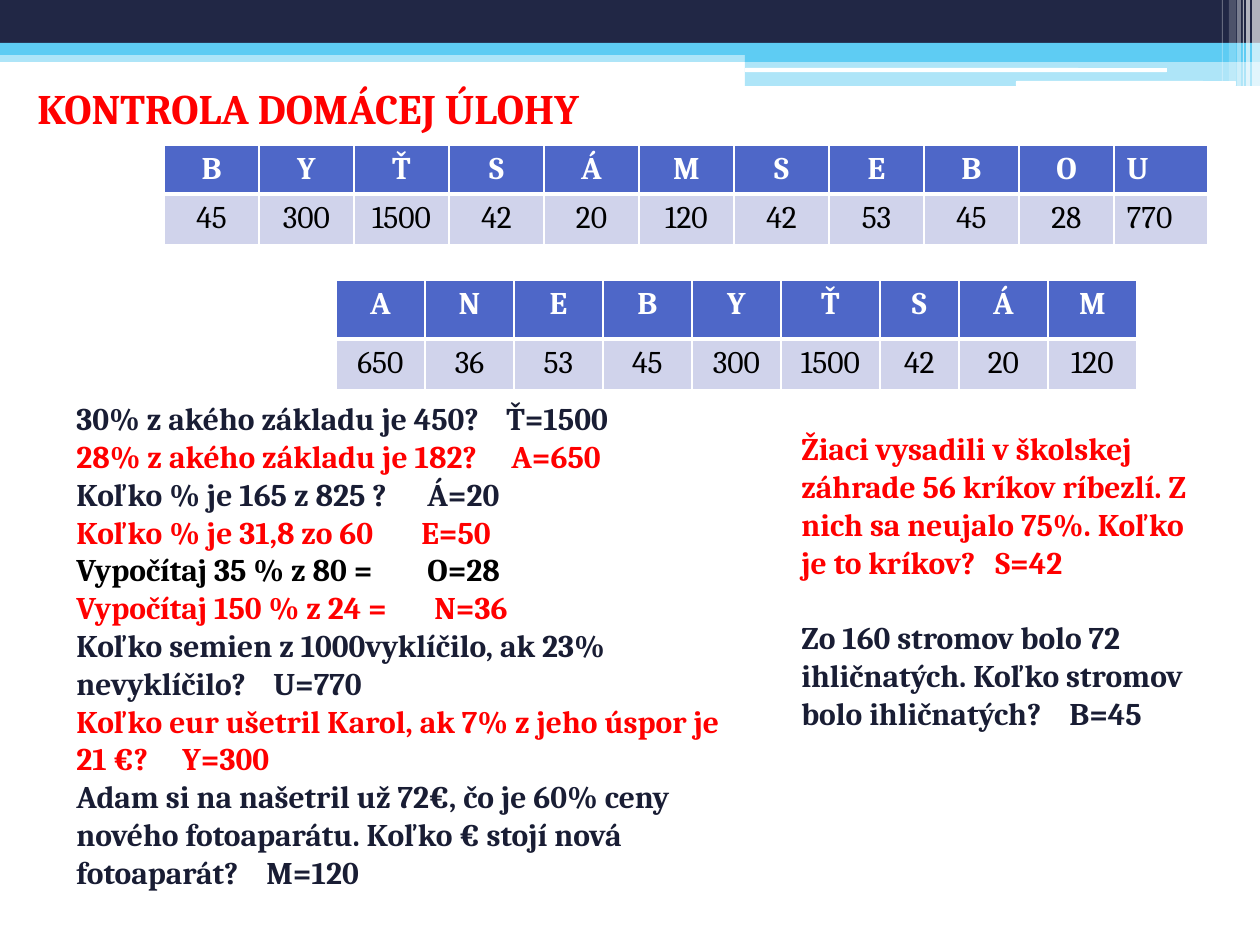
from lxml.etree import SubElement
from pptx import Presentation
from pptx.dml.color import RGBColor
from pptx.enum.shapes import MSO_SHAPE as Shape
from pptx.enum.text import MSO_ANCHOR as Anchor, PP_ALIGN as Align
from pptx.oxml.ns import qn
from pptx.util import Emu, Pt

EMU_PER_PX = 914400 / 126
FONT = "Cambria"
WHITE = RGBColor(0xFF, 0xFF, 0xFF)
BLACK = RGBColor(0x00, 0x00, 0x00)
RED = RGBColor(0xFF, 0x00, 0x00)
INK = RGBColor(0x19, 0x1D, 0x34)
NAVY = RGBColor(0x21, 0x27, 0x45)
SKY = RGBColor(0x5E, 0xCC, 0xF3)
HEADER_BLUE = RGBColor(0x4E, 0x67, 0xC8)
PALE_BLUE = RGBColor(0xD0, 0xD3, 0xEB)

# Banner parts: left, top, width, height, colour, opacity in percent
BARS = [
    (0, 50, 1260, 12, SKY, 50),
    (0, 0, 1260, 43, NAVY, 100),
    (0, 43, 1260, 12, SKY, 100),
    (745, 49, 515, 13, SKY, 100),
    (745, 61, 515, 25, SKY, 50),
]
ROUNDED_BARS = [
    (745, 68, 422, 4, WHITE, 100),
    (1016, 81, 220, 5, WHITE, 100),
]
STRIPES = [
    (1252, 0, 8, 86, WHITE, 65),
    (1246, 0, 4, 86, WHITE, 65),
    (1243, 0, 1, 86, WHITE, 60),
    (1237, 0, 4, 86, WHITE, 40),
    (1229, 0, 7, 81, WHITE, 20),
    (1222, 0, 1, 81, WHITE, 30),
]

# Questions: text, answer, answer's distance from the text edge, colour
LEFT_QUESTIONS = [
    ("30% z akého základu je 450?", "Ť=1500", 430, INK),
    ("28% z akého základu je 182?", "A=650", 435, RED),
    ("Koľko % je 165 z 825 ?", "Á=20", 351, INK),
    ("Koľko % je 31,8 zo 60", "E=50", 345, RED),
    ("Vypočítaj 35 % z 80 =", "O=28", 351, BLACK),
    ("Vypočítaj 150 % z 24 =", "N=36", 358, RED),
    ("Koľko semien z 1000vyklíčilo, ak 23% nevyklíčilo?", "U=770", 197, INK),
    ("Koľko eur ušetril Karol, ak 7% z jeho úspor je 21 €?", "Y=300", 106, RED),
    ("Adam si na našetril už 72€, čo je 60% ceny nového fotoaparátu. "
     "Koľko € stojí nová fotoaparát?", "M=120", 190, INK),
]
RIGHT_QUESTIONS = [
    ("Žiaci vysadili v školskej záhrade 56 kríkov ríbezlí. "
     "Z nich sa neujalo 75%. Koľko je to kríkov?", "S=42", 194, RED),
    ("Zo 160 stromov bolo 72 ihličnatých. Koľko stromov bolo ihličnatých?",
     "B=45", 268, INK),
]


def px(length):
    return Emu(round(length * EMU_PER_PX))


def style(para, size, color, bold=True):
    for span in para.runs:
        font = span.font
        font.name, font.size, font.bold = FONT, Pt(size), bold
        font.color.rgb = color


def add_bar(page, kind, left, top, width, height, color, opacity):
    bar = page.shapes.add_shape(kind, px(left), px(top), px(width), px(height))
    bar.shadow.inherit = False
    bar.line.fill.background()
    bar.fill.solid()
    bar.fill.fore_color.rgb = color
    if opacity < 100:
        tint = bar.fill._xPr.find(".//" + qn("a:srgbClr"))
        SubElement(tint, qn("a:alpha"), val=str(opacity * 1000))


def add_banner(page, left, top):
    groups = [(Shape.RECTANGLE, BARS), (Shape.ROUNDED_RECTANGLE, ROUNDED_BARS),
              (Shape.RECTANGLE, STRIPES)]
    for kind, bars in groups:
        for x, y, *rest in bars:
            add_bar(page, kind, left + x, top + y, *rest)


def set_borders(cell, top, bottom):
    props = cell._tc.get_or_add_tcPr()
    for side, points in (("L", 1), ("R", 1), ("T", top), ("B", bottom)):
        line = SubElement(props, qn("a:ln" + side), w=str(Pt(points)))
        fill = SubElement(line, qn("a:solidFill"))
        SubElement(fill, qn("a:srgbClr"), val=str(WHITE))


def add_key(page, left, top, widths, heights, letters, values, left_aligned=()):
    """Table with a row of letters above the row of their values."""
    frame = page.shapes.add_table(2, len(widths), px(left), px(top),
                                  px(sum(widths)), px(sum(heights)))
    table = frame.table
    for column, width in zip(table.columns, widths):
        column.width = px(width)
    looks = [(letters, HEADER_BLUE, WHITE, True, 1, 3),
             (values, PALE_BLUE, BLACK, False, 3, 1)]
    for row, (texts, back, ink, bold, upper, lower) in enumerate(looks):
        table.rows[row].height = px(heights[row])
        for col, text in enumerate(texts):
            cell = table.cell(row, col)
            set_borders(cell, upper, lower)
            cell.fill.solid()
            cell.fill.fore_color.rgb = back
            cell.vertical_anchor = Anchor.TOP
            cell.margin_bottom = px(4)
            cell.text = text
            para = cell.text_frame.paragraphs[0]
            para.alignment = Align.LEFT if col in left_aligned else Align.CENTER
            style(para, 18, ink, bold)


def add_text_frame(page, left, top, width, height):
    box = page.shapes.add_textbox(px(left), px(top), px(width), px(height))
    box.text_frame.word_wrap = True
    return box.text_frame


def add_title(page, left, top, width, height):
    para = add_text_frame(page, left, top, width, height).paragraphs[0]
    para.text = "KONTROLA DOMÁCEJ ÚLOHY"
    style(para, 24, RED)


def add_questions(page, left, top, width, height, questions, gap=0):
    frame = add_text_frame(page, left, top, width, height)
    for index, (question, answer, stop, color) in enumerate(questions):
        para = frame.add_paragraph() if index else frame.paragraphs[0]
        para.text = f"{question}\t{answer}"
        para.space_before = Pt(gap if index else 0)
        tabs = SubElement(para._p.get_or_add_pPr(), qn("a:tabLst"))
        SubElement(tabs, qn("a:tab"), pos=str(px(stop)), algn="l")
        style(para, 18, color)


def main():
    deck = Presentation()
    deck.slide_width, deck.slide_height = px(1260), px(945)
    page = deck.slides.add_slide(deck.slide_layouts[6])

    add_banner(page, 0, 0)
    # Solution keys
    add_key(page, 164, 145, [95] * 10 + [94], [49, 51], "BYŤSÁMSEBOU",
            "45 300 1500 42 20 120 42 53 45 28 770".split(), left_aligned=[10])
    add_key(page, 336, 280, [89] * 5 + [99, 79, 89, 89], [59, 51], "ANEBYŤSÁM",
            "650 36 53 45 300 1500 42 20 120".split())
    # Questions with answers
    add_questions(page, 64, 393, 673, 585, LEFT_QUESTIONS)
    add_questions(page, 789, 423, 417, 394, RIGHT_QUESTIONS, gap=21.6)
    add_title(page, 25, 76, 713, 63)

    deck.save("out.pptx")


if __name__ == "__main__":
    main()
